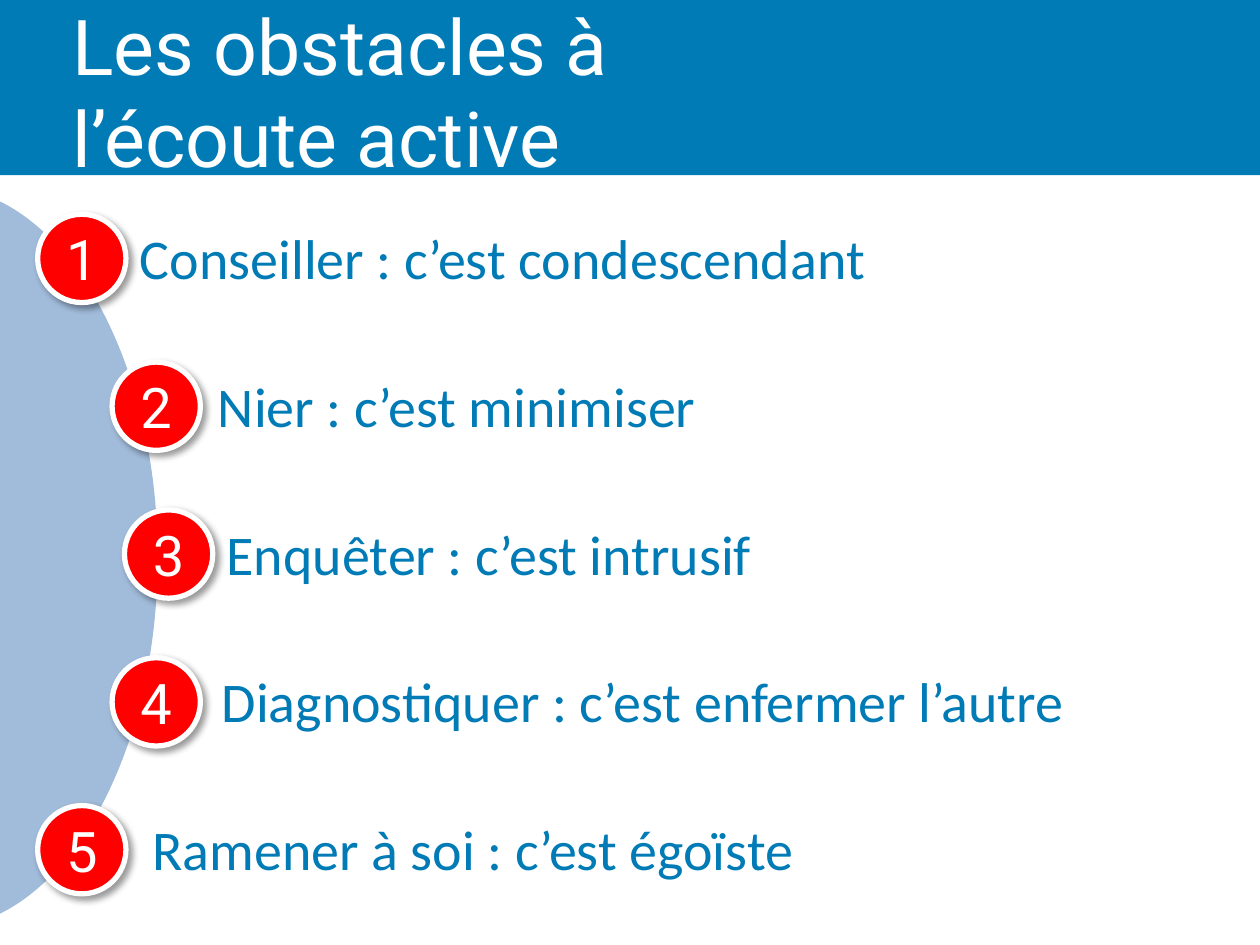
"""Build the slide on the five obstacles to active listening."""
from lxml.etree import SubElement
from pptx import Presentation
from pptx.dml.color import RGBColor
from pptx.enum.shapes import MSO_SHAPE
from pptx.enum.text import MSO_ANCHOR, MSO_AUTO_SIZE, PP_ALIGN
from pptx.oxml.ns import qn
from pptx.util import Cm, Pt

COLORS = {"blue": "007BB6", "arc": "A1BBDA", "red": "FF0000", "white": "FFFFFF", "shadow": "000000"}
LEFT, CENTER = PP_ALIGN.LEFT, PP_ALIGN.CENTER
OBSTACLES = [
    ("Conseiller : c’est condescendant", 0.76, 2.57, 15.8, LEFT),
    ("Nier : c’est minimiser", 2.26, 4.06, 10.31, CENTER),
    ("Enquêter : c’est intrusif", 2.51, 4.32, 11.3, LEFT),
    ("Diagnostiquer : c’est enfermer l’autre", 2.26, 4.06, 17.81, CENTER),
    ("Ramener à soi : c’est égoïste", 0.76, 2.54, 14, CENTER),
]
FIRST_TOP, PITCH, DIAMETER = 4.32, 2.98, 1.78


def add_filled(shapes, kind, left, top, width, height, color):
    sp = shapes.add_shape(kind, Cm(left), Cm(top), Cm(width), Cm(height))
    sp.shadow.inherit = False
    sp.fill.solid()
    sp.fill.fore_color.rgb = RGBColor.from_string(COLORS[color])
    sp.line.fill.background()
    return sp


def add_run(p, text, size, font, color):
    r = p.add_run()
    r.text = text
    r.font.size = Pt(size)
    r.font.name = font
    r.font.color.rgb = RGBColor.from_string(COLORS[color])


prs = Presentation()
prs.slide_width, prs.slide_height = Cm(25.4), Cm(19.05)
s = prs.slides.add_slide(prs.slide_layouts[6])

add_filled(s.shapes, MSO_SHAPE.RECTANGLE, 0, 0, 25.4, 3.53, "blue")

title = s.shapes.add_textbox(Cm(1.27), Cm(-0.28), Cm(18.24), Cm(3.63))
tf = title.text_frame
tf.word_wrap = True
tf.margin_left = Cm(0.19)
tf.margin_top = Cm(0.25)
p = tf.paragraphs[0]
add_run(p, "Les obstacles à", 44, "Roboto", "white")
p.add_line_break()
add_run(p, "l’écoute active", 44, "Roboto", "white")

arc = add_filled(s.shapes, MSO_SHAPE.ARC, -5.66, 3.76, 8.84, 14.96, "arc")
arc.adjustments[0] = 162
arc.adjustments[1] = 53.84

for i, (text, circle_left, text_left, text_width, align) in enumerate(OBSTACLES):
    top = FIRST_TOP + i * PITCH
    group = s.shapes.add_group_shape()

    label = group.shapes.add_textbox(Cm(text_left), Cm(top + 0.06), Cm(text_width), Cm(1.63))
    tf = label.text_frame
    tf.word_wrap = True
    tf.auto_size = MSO_AUTO_SIZE.SHAPE_TO_FIT_TEXT
    p = tf.paragraphs[0]
    p.alignment = align
    add_run(p, text, 32, "Calibri", "blue")

    circle = add_filled(group.shapes, MSO_SHAPE.OVAL, circle_left, top, DIAMETER, DIAMETER, "red")
    circle.line.color.rgb = RGBColor.from_string(COLORS["white"])
    circle.line.width = Pt(3)
    effects = circle._element.spPr.find(qn("a:effectLst"))
    shadow = SubElement(effects, qn("a:outerShdw"), blurRad=str(Pt(4)), dist=str(Pt(3)),
                        dir="2700000", algn="tl", rotWithShape="0")
    tint = SubElement(shadow, qn("a:srgbClr"), val=COLORS["shadow"])
    SubElement(tint, qn("a:alpha"), val="40000")
    tf = circle.text_frame
    tf.vertical_anchor = MSO_ANCHOR.MIDDLE
    p = tf.paragraphs[0]
    p.alignment = CENTER
    add_run(p, str(i + 1), 32, "Roboto", "white")

prs.save("out.pptx")
